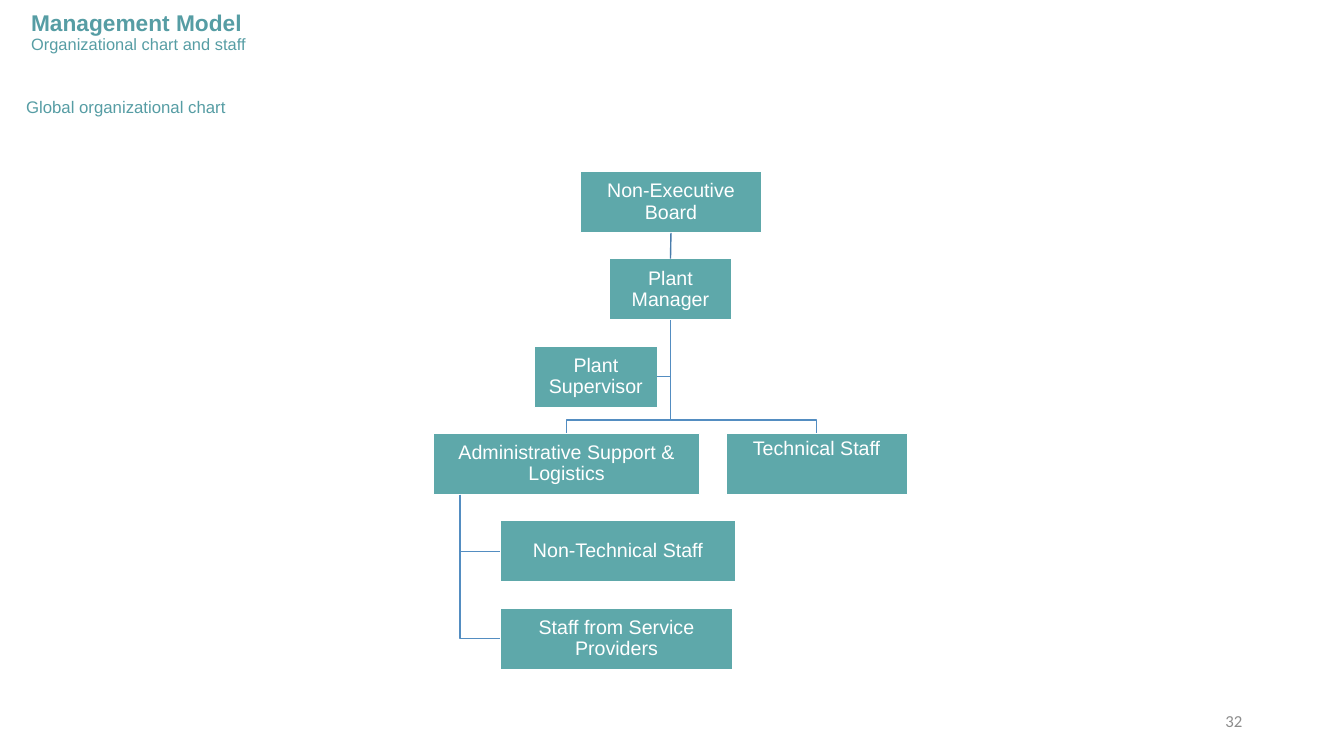
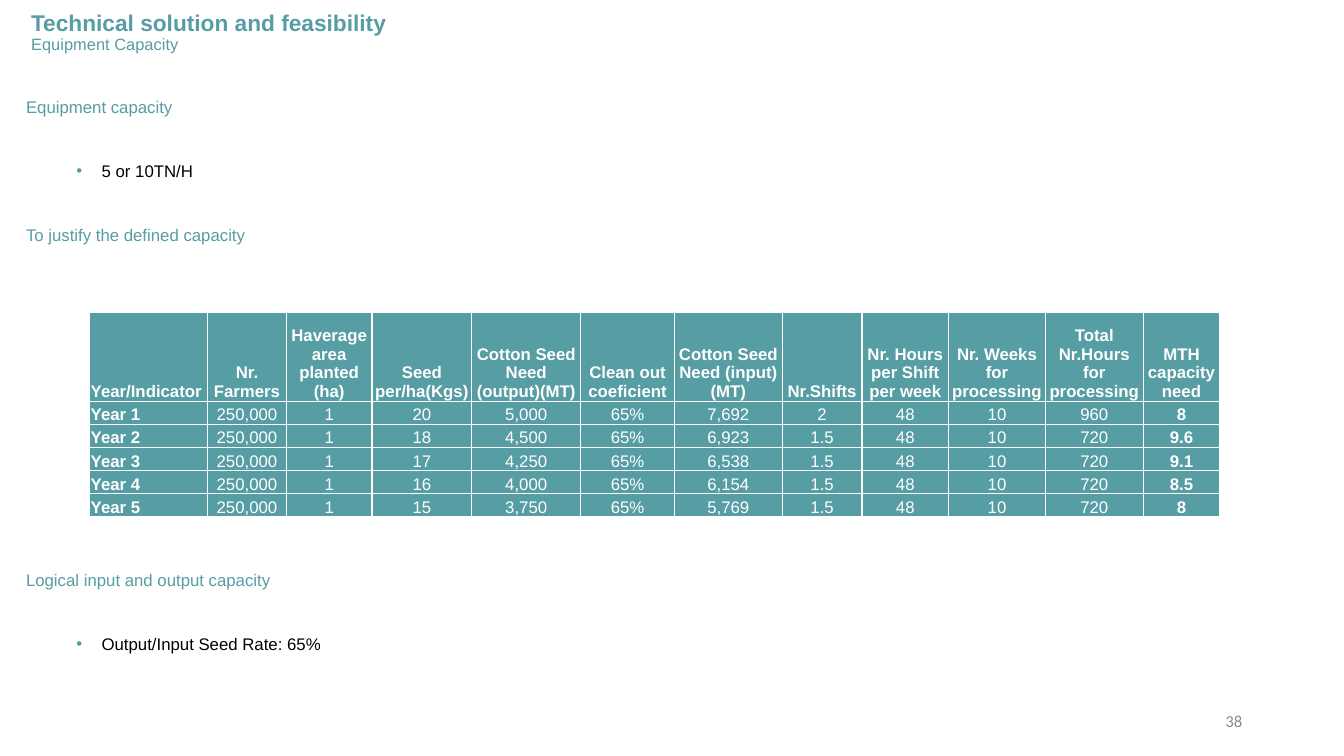
from lxml.etree import SubElement
from pptx import Presentation
from pptx.dml.color import RGBColor
from pptx.enum.shapes import MSO_CONNECTOR, MSO_SHAPE
from pptx.enum.text import MSO_ANCHOR as Anchor, PP_ALIGN as Align
from pptx.oxml.ns import qn
from pptx.util import Inches, Pt

TEAL = RGBColor(0x56, 0x9D, 0xA4)
BOX_TEAL = RGBColor(0x5E, 0xA8, 0xAA)
BRANCH_BLUE = RGBColor(0x53, 0x8D, 0xC1)
LINK_BLUE = RGBColor(0x49, 0x7C, 0xAB)
WHITE = RGBColor(0xFF, 0xFF, 0xFF)
BLACK = RGBColor(0, 0, 0)
GREY = RGBColor(0x8C, 0x8C, 0x8C)

CHART_TOP, CHART_LAST_TOP, CHART_STEPS = 1.7, 6.03, 5
BOX_HEIGHT = 0.61

COLUMN_WIDTHS = [1.17, 0.78, 0.85, 0.99, 1.08, 0.93, 1.07, 0.79, 0.86, 0.96, 0.97, 0.76]
ROW_HEIGHTS = [0.88] + [0.23] * 5
CAPACITY_ROWS = [
    ["Year/Indicator", "Nr. Farmers", "Haverage area planted (ha)", "Seed per/ha(Kgs)",
     "Cotton Seed Need (output)(MT)", "Clean out coeficient", "Cotton Seed Need (input)(MT)",
     "Nr.Shifts", "Nr. Hours per Shift per week", "Nr. Weeks for processing",
     "Total Nr.Hours for processing", "MTH capacity need"],
    ["Year 1", "250,000", "1", "20", "5,000", "65%", "7,692", "2", "48", "10", "960", "8"],
    ["Year 2", "250,000", "1", "18", "4,500", "65%", "6,923", "1.5", "48", "10", "720", "9.6"],
    ["Year 3", "250,000", "1", "17", "4,250", "65%", "6,538", "1.5", "48", "10", "720", "9.1"],
    ["Year 4", "250,000", "1", "16", "4,000", "65%", "6,154", "1.5", "48", "10", "720", "8.5"],
    ["Year 5", "250,000", "1", "15", "3,750", "65%", "5,769", "1.5", "48", "10", "720", "8"],
]


class Deck:
    def __init__(self):
        self.presentation = Presentation()
        self.presentation.slide_width = Inches(13.33)
        self.presentation.slide_height = Inches(7.5)
        self.slide = None

    def style(self, font, size, color, bold=False, name="Arial"):
        font.name = name
        font.size = Pt(size)
        font.bold = bold
        font.color.rgb = color

    def text_frame(self, left, top, width, height, anchor=Anchor.TOP):
        box = self.slide.shapes.add_textbox(Inches(left), Inches(top), Inches(width), Inches(height))
        frame = box.text_frame
        frame.word_wrap = True
        frame.vertical_anchor = anchor
        return frame

    def new_slide(self, title, subtitle, number):
        self.slide = self.presentation.slides.add_slide(self.presentation.slide_layouts[6])
        paragraph = self.text_frame(0.21, 0.08, 8.25, 0.49, Anchor.MIDDLE).paragraphs[0]
        paragraph.line_spacing = 0.9
        title_run = paragraph.add_run()
        title_run.text = title
        self.style(title_run.font, 16.2, TEAL, bold=True)
        paragraph.add_line_break()
        subtitle_run = paragraph.add_run()
        subtitle_run.text = subtitle
        self.style(subtitle_run.font, 11.7, TEAL)

        paragraph = self.text_frame(9.42, 6.95, 3, 0.4, Anchor.MIDDLE).paragraphs[0]
        paragraph.text = str(number)
        paragraph.alignment = Align.RIGHT
        self.style(paragraph.font, 12, GREY, name="Calibri")

    def body(self, top, height, heading, *items):
        frame = self.text_frame(0.16, top, 13.04, height)
        for index, (text, bulleted) in enumerate([(heading, False), *items]):
            paragraph = frame.add_paragraph() if index else frame.paragraphs[0]
            paragraph.text = text
            paragraph.line_spacing = 1.5
            paragraph.space_before = paragraph.space_after = Pt(12)
            self.style(paragraph.font, 12, BLACK if bulleted else TEAL)
            if bulleted:
                self.bullet(paragraph)

    def bullet(self, paragraph):
        properties = paragraph._p.get_or_add_pPr()
        properties.set("marL", str(Inches(0.75)))
        properties.set("indent", str(Inches(-0.25)))
        color = SubElement(properties, qn("a:buClr"))
        SubElement(color, qn("a:srgbClr"), val=str(TEAL))
        SubElement(properties, qn("a:buFont"), typeface="Arial")
        SubElement(properties, qn("a:buChar"), char="•")

    def chart_box(self, text, level, left, width, anchor=Anchor.MIDDLE, inset_top=0.01):
        top = CHART_TOP + level * (CHART_LAST_TOP - CHART_TOP) / CHART_STEPS
        shape = self.slide.shapes.add_shape(
            MSO_SHAPE.RECTANGLE, Inches(left), Inches(top), Inches(width), Inches(BOX_HEIGHT))
        shape.shadow.inherit = False
        shape.fill.solid()
        shape.fill.fore_color.rgb = BOX_TEAL
        shape.line.color.rgb = WHITE
        shape.line.width = Pt(1)
        frame = shape.text_frame
        frame.word_wrap = True
        frame.vertical_anchor = anchor
        frame.margin_left = frame.margin_right = frame.margin_bottom = Inches(0.01)
        frame.margin_top = Inches(inset_top)
        paragraph = frame.paragraphs[0]
        paragraph.text = text
        paragraph.alignment = Align.CENTER
        paragraph.line_spacing = 0.9
        self.style(paragraph.font, 14, WHITE)
        return shape

    def link(self, upper, lower):
        connector = self.slide.shapes.add_connector(MSO_CONNECTOR.STRAIGHT, 0, 0, 0, 0)
        connector.begin_connect(upper, 2)
        connector.end_connect(lower, 0)
        connector.line.color.rgb = LINK_BLUE
        connector.line.width = Pt(1)
        SubElement(connector._element.spPr, qn("a:effectLst"))

    def branch(self, start, *points):
        builder = self.slide.shapes.build_freeform(*start)
        builder.add_line_segments(points, close=False)
        shape = builder.convert_to_shape()
        shape.shadow.inherit = False
        shape.fill.background()
        shape.line.color.rgb = BRANCH_BLUE
        shape.line.width = Pt(1)

    def table(self, left, top, rows, widths, heights):
        table = self.slide.shapes.add_table(
            len(rows), len(widths), Inches(left), Inches(top),
            Inches(sum(widths)), Inches(sum(heights))).table
        table.first_row = table.horz_banding = False
        for column, width in zip(table.columns, widths):
            column.width = Inches(width)
        for row, height in zip(table.rows, heights):
            row.height = Inches(height)
        last_column = len(widths) - 1
        for row_index, values in enumerate(rows):
            for column_index, value in enumerate(values):
                bold = row_index == 0 or column_index in (0, last_column)
                align = Align.CENTER if column_index else Align.LEFT
                self.cell(table.cell(row_index, column_index), value, bold, align)

    def cell(self, cell, value, bold, align):
        properties = cell._tc.get_or_add_tcPr()
        for side in ("a:lnL", "a:lnR", "a:lnT", "a:lnB"):
            border = SubElement(properties, qn(side), w=str(Pt(1)))
            fill = SubElement(border, qn("a:solidFill"))
            SubElement(fill, qn("a:srgbClr"), val=str(WHITE))
        cell.fill.solid()
        cell.fill.fore_color.rgb = TEAL
        cell.margin_left = cell.margin_right = cell.margin_top = Inches(0.01)
        cell.margin_bottom = 0
        cell.vertical_anchor = Anchor.BOTTOM
        paragraph = cell.text_frame.paragraphs[0]
        paragraph.text = value
        paragraph.alignment = align
        self.style(paragraph.font, 12, WHITE, bold)


def center_x(shape):
    return shape.left + shape.width // 2


def middle_y(shape):
    return shape.top + shape.height // 2


def bottom(shape):
    return shape.top + shape.height


def organization_slide(deck):
    deck.new_slide("Management Model", "Organizational chart and staff", 32)
    deck.body(0.81, 6.58, "Global organizational chart")

    board = deck.chart_box("Non-Executive Board", 0, 5.76, 1.79)
    manager = deck.chart_box("Plant Manager", 1, 6.04, 1.22)
    supervisor = deck.chart_box("Plant Supervisor", 2, 5.3, 1.22)
    support = deck.chart_box("Administrative Support & Logistics", 3, 4.3, 2.64)
    technical = deck.chart_box("Technical Staff", 3, 7.2, 1.8, Anchor.TOP, 0.05)
    non_technical = deck.chart_box("Non-Technical Staff", 4, 4.96, 2.34)
    providers = deck.chart_box("Staff from Service Providers", 5, 4.96, 2.31)

    deck.link(board, manager)
    trunk_x, trunk_top = center_x(manager), bottom(manager)
    deck.branch((trunk_x, trunk_top), (trunk_x, middle_y(supervisor)),
                (supervisor.left + supervisor.width, middle_y(supervisor)))
    split_y = support.top - Inches(0.13)
    for child in (support, technical):
        deck.branch((trunk_x, trunk_top), (trunk_x, split_y),
                    (center_x(child), split_y), (center_x(child), child.top))
    stem_x = support.left + support.width // 10
    for child in (non_technical, providers):
        deck.branch((stem_x, bottom(support)), (stem_x, middle_y(child)),
                    (child.left, middle_y(child)))


def capacity_slide(deck):
    deck.new_slide("Technical solution and feasibility", "Equipment Capacity", 38)
    deck.body(0.81, 1.9, "Equipment capacity", ("5 or 10TN/H", True),
              ("To justify the defined capacity", False))
    deck.table(0.89, 3.1, CAPACITY_ROWS, COLUMN_WIDTHS, ROW_HEIGHTS)
    deck.body(5.5, 1.3, "Logical input and output capacity",
              ("Output/Input Seed Rate: 65%", True))


def main():
    deck = Deck()
    organization_slide(deck)
    capacity_slide(deck)
    deck.presentation.save("out.pptx")


if __name__ == "__main__":
    main()
